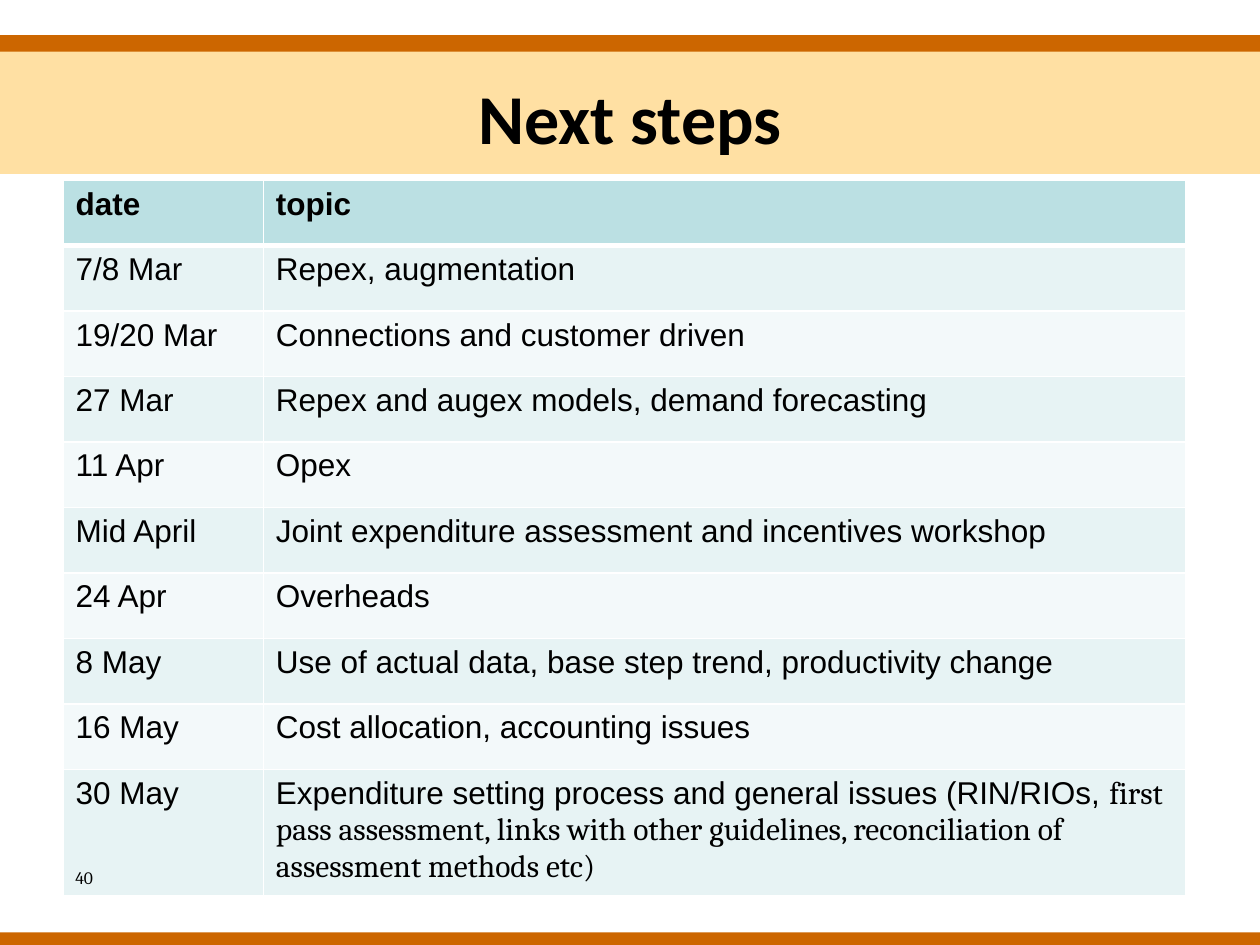
"""Builds the "Next steps" slide: a banded title above a schedule of workshop dates."""
from lxml.etree import SubElement
from pptx import Presentation
from pptx.dml.color import RGBColor
from pptx.enum.shapes import MSO_SHAPE
from pptx.enum.text import MSO_ANCHOR, PP_ALIGN
from pptx.oxml.ns import qn
from pptx.util import Inches, Pt

THEME = {
    "bar": "CC6600", "band": "FFCC66", "band_alpha": 60,
    "header": "BBE0E3", "stripes": ("E7F3F4", "F3F9FA"), "rule": "FFFFFF",
    "title": {"name": "Calibri", "size": Pt(40), "bold": True},
    "heading": {"name": "Arial", "size": Pt(18), "bold": True},
    "body": {"name": "Arial", "size": Pt(18), "bold": False},
    "detail": {"name": "Cambria", "size": Pt(18), "bold": False},
    "number": {"name": "Cambria", "size": Pt(10), "bold": False},
    "ink": "000000",
}

SCHEDULE = [
    ("date", "topic"),
    ("7/8 Mar", "Repex, augmentation"),
    ("19/20 Mar", "Connections and customer driven"),
    ("27 Mar", "Repex and augex models, demand forecasting"),
    ("11 Apr", "Opex"),
    ("Mid April", "Joint expenditure assessment and incentives workshop"),
    ("24 Apr", "Overheads"),
    ("8 May", "Use of actual data, base step trend, productivity change"),
    ("16 May", "Cost allocation, accounting issues"),
    ("30 May", "Expenditure setting process and general issues (RIN/RIOs, "),
]
LAST_TOPIC_DETAIL = ("first pass assessment, links with other guidelines, "
                     "reconciliation of assessment methods etc)")


def write(paragraph, text, style):
    run = paragraph.add_run()
    run.text = text
    for attribute, value in THEME[style].items():
        setattr(run.font, attribute, value)
    run.font.color.rgb = RGBColor.from_string(THEME["ink"])


def rule_cell(cell, bottom_width):
    properties = cell._tc.get_or_add_tcPr()
    widths = {"a:lnL": 1, "a:lnR": 1, "a:lnT": 1, "a:lnB": bottom_width}
    for side, width in widths.items():
        line = SubElement(properties, qn(side), w=str(Pt(width)))
        fill = SubElement(line, qn("a:solidFill"))
        SubElement(fill, qn("a:srgbClr"), val=THEME["rule"])


presentation = Presentation()
presentation.slide_width, presentation.slide_height = Inches(10), Inches(7.5)
slide = presentation.slides.add_slide(presentation.slide_layouts[6])

for top, height, role in ((7.4, 0.13, "bar"), (0.28, 1.1, "band"), (0.28, 0.13, "bar")):
    stripe = slide.shapes.add_shape(
        MSO_SHAPE.RECTANGLE, 0, Inches(top), Inches(10), Inches(height))
    stripe.shadow.inherit = False
    stripe.line.fill.background()
    stripe.fill.solid()
    stripe.fill.fore_color.rgb = RGBColor.from_string(THEME[role])
    if role == "band":
        colour = stripe._element.spPr.find(qn("a:solidFill")).find(qn("a:srgbClr"))
        SubElement(colour, qn("a:alpha"), val=str(THEME["band_alpha"] * 1000))

title = slide.shapes.add_textbox(Inches(0.5), Inches(0.3), Inches(9), Inches(1.25)).text_frame
title.word_wrap = True
title.vertical_anchor = MSO_ANCHOR.MIDDLE
title.paragraphs[0].alignment = PP_ALIGN.CENTER
write(title.paragraphs[0], "Next steps", "title")

schedule = slide.shapes.add_table(
    len(SCHEDULE), 2, Inches(0.5), Inches(1.43), Inches(8.91), Inches(5.2)).table
for column, width in zip(schedule.columns, (1.59, 7.32)):
    column.width = Inches(width)

for row_index, entry in enumerate(SCHEDULE):
    is_header = row_index == 0
    fill_colour = THEME["header"] if is_header else THEME["stripes"][(row_index - 1) % 2]
    schedule.rows[row_index].height = Inches(0.52)
    for column_index, text in enumerate(entry):
        cell = schedule.cell(row_index, column_index)
        rule_cell(cell, 3 if is_header else 1)
        cell.fill.solid()
        cell.fill.fore_color.rgb = RGBColor.from_string(fill_colour)
        write(cell.text_frame.paragraphs[0], text, "heading" if is_header else "body")

last_topic = schedule.cell(len(SCHEDULE) - 1, 1).text_frame.paragraphs[0]
write(last_topic, LAST_TOPIC_DETAIL, "detail")

page_number = slide.shapes.add_textbox(
    Inches(0.5), Inches(6.83), Inches(3), Inches(0.52)).text_frame
page_number.word_wrap = True
write(page_number.paragraphs[0], "40", "number")

presentation.save("out.pptx")
